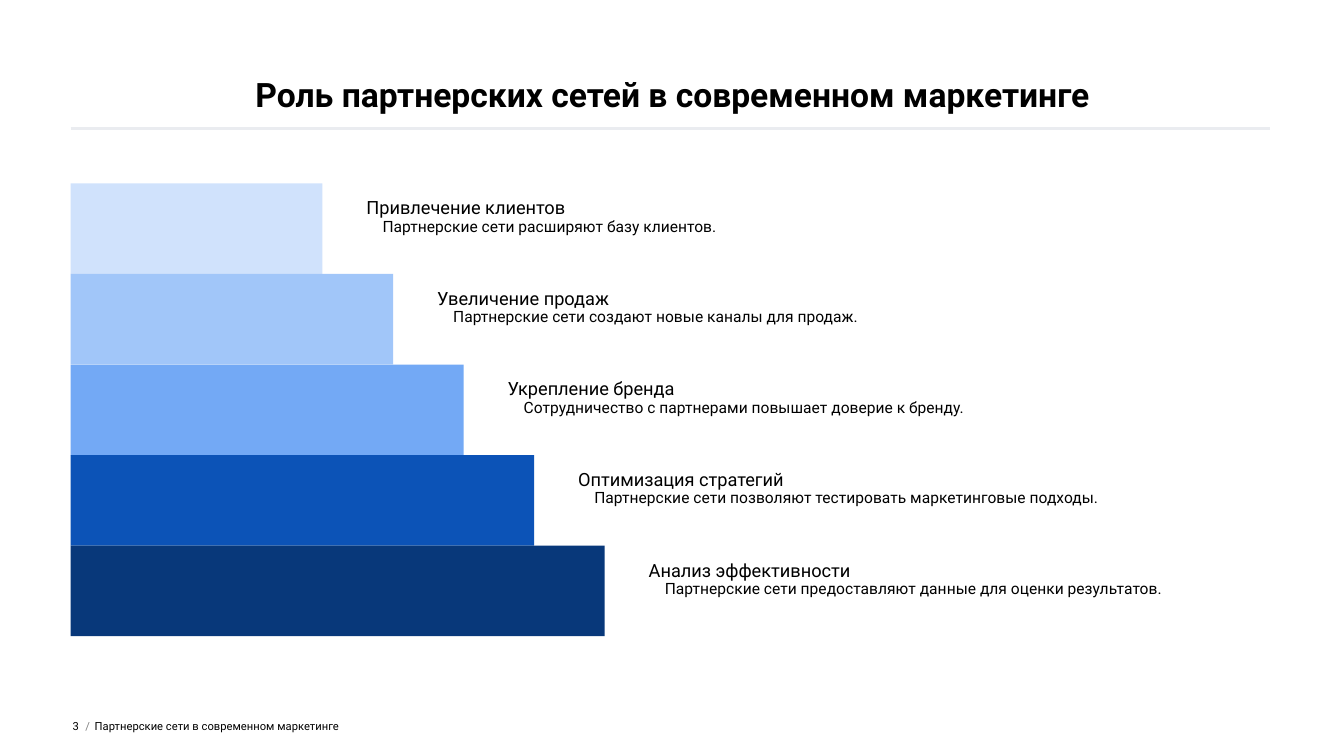
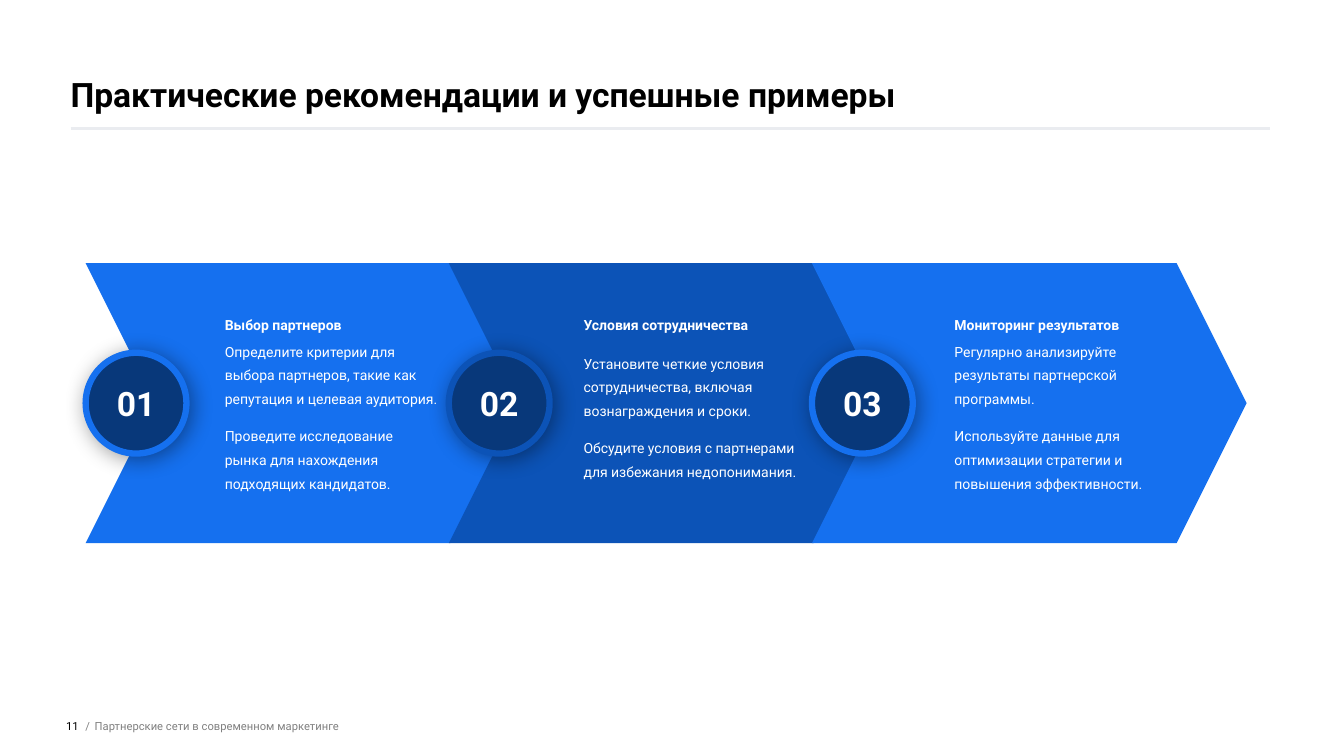
from dataclasses import dataclass

from lxml.etree import SubElement
from pptx import Presentation
from pptx.dml.color import RGBColor
from pptx.enum.shapes import MSO_CONNECTOR, MSO_SHAPE
from pptx.enum.text import MSO_ANCHOR, MSO_AUTO_SIZE, PP_ALIGN
from pptx.oxml.ns import qn
from pptx.util import Pt


@dataclass(frozen=True)
class Theme:
    font: str = "Roboto"
    black: RGBColor = RGBColor.from_string("000000")
    white: RGBColor = RGBColor.from_string("FFFFFF")
    gray: RGBColor = RGBColor.from_string("808080")
    rule: RGBColor = RGBColor.from_string("EAECF0")
    palest: RGBColor = RGBColor.from_string("D0E2FC")
    pale: RGBColor = RGBColor.from_string("A1C6F9")
    light: RGBColor = RGBColor.from_string("73A9F5")
    bright: RGBColor = RGBColor.from_string("1570EF")
    deep: RGBColor = RGBColor.from_string("0C53B7")
    navy: RGBColor = RGBColor.from_string("08387A")
    title_size: float = 24
    heading_size: float = 13
    detail_size: float = 11.1
    body_size: float = 10
    footer_size: float = 8


theme = Theme()
MARGIN = 50.4


def write_text(shape, lines, size, color, bold=False, align=PP_ALIGN.LEFT,
               anchor=MSO_ANCHOR.MIDDLE):
    """Write one paragraph per line and return the paragraphs."""
    frame = shape.text_frame
    frame.word_wrap = True
    frame.auto_size = MSO_AUTO_SIZE.NONE
    frame.vertical_anchor = anchor
    frame.margin_left = frame.margin_right = Pt(0)
    frame.margin_top = frame.margin_bottom = Pt(0)
    for index, line in enumerate(lines):
        paragraph = frame.add_paragraph() if index else frame.paragraphs[0]
        paragraph.alignment = align
        run = paragraph.add_run()
        run.text = line
        run.font.name = theme.font
        run.font.size = Pt(size)
        run.font.bold = bold
        run.font.color.rgb = color
    return frame.paragraphs


def start_slide(presentation, title, title_align, number, footer_color):
    """Add a slide with its title, rule and footer."""
    slide = presentation.slides.add_slide(presentation.slide_layouts[5])
    shape = slide.shapes.title
    shape.left, shape.top, shape.width, shape.height = Pt(MARGIN), Pt(0), Pt(860), Pt(81.4)
    write_text(shape, [title], theme.title_size, theme.black, True, title_align,
               MSO_ANCHOR.BOTTOM)

    rule = slide.shapes.add_connector(
        MSO_CONNECTOR.STRAIGHT, Pt(MARGIN), Pt(92), Pt(907.2), Pt(92))
    rule.line.color.rgb = theme.rule
    rule.line.width = Pt(2)
    SubElement(rule._element.spPr, qn("a:effectLst"))

    footer_parts = [
        (number, 34, 22.3, theme.black, PP_ALIGN.RIGHT),
        ("/", 61, 6, theme.gray, PP_ALIGN.LEFT),
        ("Партнерские сети в современном маркетинге", 67.7, 620, footer_color, PP_ALIGN.LEFT),
    ]
    for text, left, width, color, align in footer_parts:
        box = slide.shapes.add_textbox(Pt(left), Pt(497), Pt(width), Pt(43))
        write_text(box, [text], theme.footer_size, color, align=align)
    return slide


presentation = Presentation()
presentation.slide_width = Pt(960)
presentation.slide_height = Pt(540)

# Slide 1: staircase of growing bars
slide = start_slide(presentation, "Роль партнерских сетей в современном маркетинге",
                    PP_ALIGN.CENTER, "3", theme.black)
steps = [
    (theme.palest, "Привлечение клиентов",
     "Партнерские сети расширяют базу клиентов."),
    (theme.pale, "Увеличение продаж",
     "Партнерские сети создают новые каналы для продаж."),
    (theme.light, "Укрепление бренда",
     "Сотрудничество с партнерами повышает доверие к бренду."),
    (theme.deep, "Оптимизация стратегий",
     "Партнерские сети позволяют тестировать маркетинговые подходы."),
    (theme.navy, "Анализ эффективности",
     "Партнерские сети предоставляют данные для оценки результатов."),
]
bar_height = 64.7
for index, (color, heading, detail) in enumerate(steps):
    top = 131 + index * bar_height
    width = 180 + index * 50.4
    bar = slide.shapes.add_shape(
        MSO_SHAPE.RECTANGLE, Pt(MARGIN), Pt(top), Pt(width), Pt(bar_height))
    bar.shadow.inherit = False
    bar.fill.solid()
    bar.fill.fore_color.rgb = color
    bar.line.fill.background()

    box = slide.shapes.add_textbox(
        Pt(MARGIN + width + 31.4), Pt(top + 11.2), Pt(417.6), Pt(43))
    paragraphs = write_text(box, [heading, detail], theme.heading_size, theme.black,
                            anchor=MSO_ANCHOR.TOP)
    for paragraph in paragraphs:
        paragraph.line_spacing = 0.9
    paragraphs[1].runs[0].font.size = Pt(theme.detail_size)
    paragraphs[1]._p.get_or_add_pPr().set("marL", str(Pt(11.5)))

# Slide 2: chain of numbered chevrons
slide = start_slide(presentation, "Практические рекомендации и успешные примеры",
                    PP_ALIGN.LEFT, "11", theme.gray)
stages = [
    (theme.bright, 160.6, "Выбор партнеров", [
        "Определите критерии для выбора партнеров, такие как репутация и целевая аудитория.",
        "Проведите исследование рынка для нахождения подходящих кандидатов."]),
    (theme.deep, 416.9, "Условия сотрудничества", [
        "Установите четкие условия сотрудничества, включая вознаграждения и сроки.",
        "Обсудите условия с партнерами для избежания недопонимания."]),
    (theme.bright, 681.8, "Мониторинг результатов", [
        "Регулярно анализируйте результаты партнерской программы.",
        "Используйте данные для оптимизации стратегии и повышения эффективности."]),
]
for index, (color, text_left, heading, advice) in enumerate(stages):
    left = 61.2 + index * 259.4
    chevron = slide.shapes.add_shape(
        MSO_SHAPE.CHEVRON, Pt(left), Pt(188), Pt(310.5), Pt(200))
    chevron.adjustments[0] = 0.25
    chevron.shadow.inherit = False
    chevron.fill.solid()
    chevron.fill.fore_color.rgb = color
    chevron.line.fill.background()

    # Numbered badge with a soft shadow
    badge = slide.shapes.add_shape(MSO_SHAPE.OVAL, Pt(left), Pt(252), Pt(72), Pt(72))
    badge.fill.solid()
    badge.fill.fore_color.rgb = theme.navy
    badge.line.color.rgb = color
    badge.line.width = Pt(4.5)
    badge.shadow.inherit = False
    effects = badge._element.spPr.find(qn("a:effectLst"))
    shadow = SubElement(effects, qn("a:outerShdw"), blurRad=str(Pt(15.8)),
                        dist=str(Pt(3)), dir="2700000", algn="ctr", rotWithShape="0")
    shadow_color = SubElement(shadow, qn("a:srgbClr"), val=str(theme.black))
    SubElement(shadow_color, qn("a:alpha"), val="40000")
    write_text(badge, [f"{index + 1:02}"], theme.title_size, theme.white, True,
               PP_ALIGN.CENTER)

    # Heading and advice
    box = slide.shapes.add_textbox(Pt(text_left), Pt(206), Pt(152), Pt(32.4))
    write_text(box, [heading], theme.body_size, theme.white, True,
               anchor=MSO_ANCHOR.BOTTOM)
    box = slide.shapes.add_textbox(Pt(text_left), Pt(243.4), Pt(152), Pt(105))
    for paragraph in write_text(box, advice, theme.body_size, theme.white):
        paragraph.line_spacing = 1.4
        paragraph.space_after = Pt(10)

presentation.save("out.pptx")
